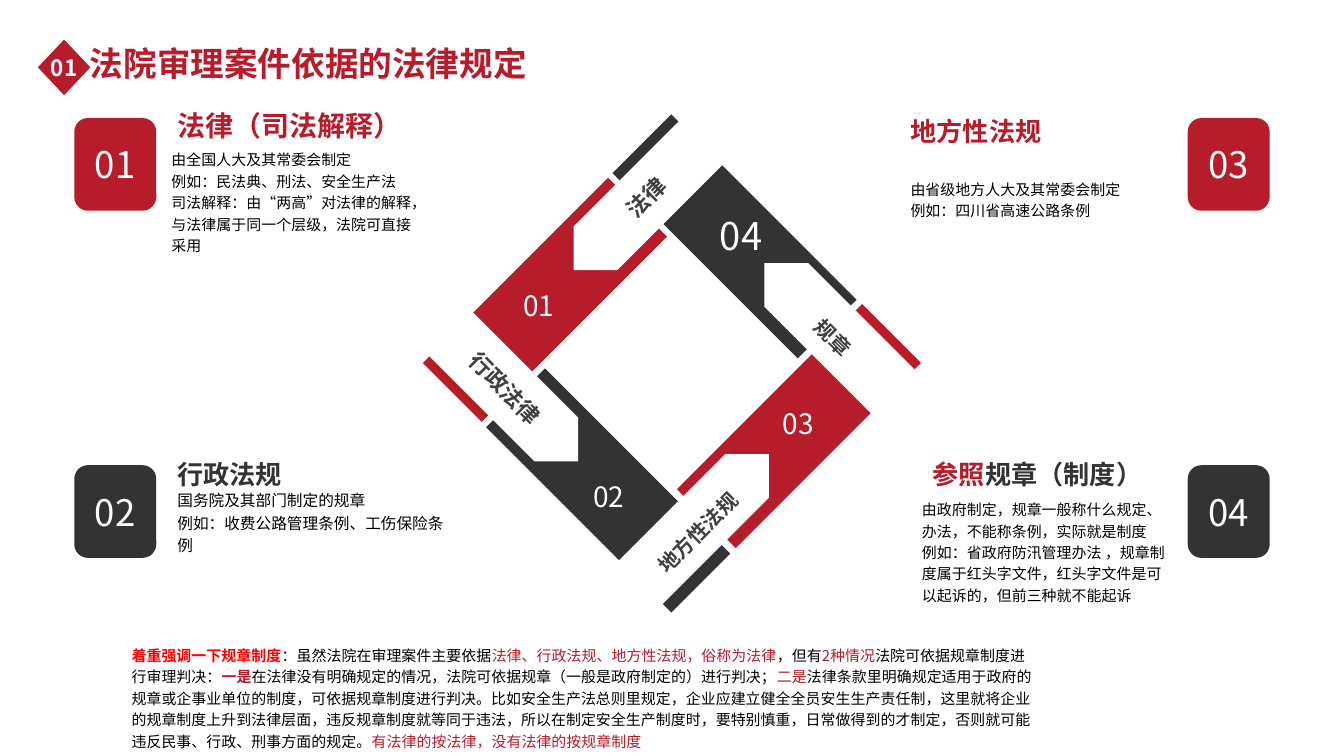
from lxml import etree
from pptx import Presentation
from pptx.dml.color import RGBColor
from pptx.enum.shapes import MSO_SHAPE
from pptx.enum.text import MSO_ANCHOR, PP_ALIGN
from pptx.oxml.ns import qn
from pptx.util import Pt

RED = RGBColor(0xB7, 0x1C, 0x2B)
BRIGHT_RED = RGBColor(0xFF, 0x00, 0x00)
DARK = RGBColor(0x33, 0x33, 0x33)
GREY = RGBColor(0x40, 0x40, 0x40)
BLACK = RGBColor(0x00, 0x00, 0x00)
WHITE = RGBColor(0xFF, 0xFF, 0xFF)
FONT = "Noto Sans CJK SC"

presentation = Presentation()
presentation.slide_width = Pt(720)
presentation.slide_height = Pt(405)
slide = presentation.slides.add_slide(presentation.slide_layouts[6])


def add_block(kind, left, top, width, height, fill, rotation=0):
    shape = slide.shapes.add_shape(kind, Pt(left), Pt(top), Pt(width), Pt(height))
    shape.shadow.inherit = False
    shape.fill.solid()
    shape.fill.fore_color.rgb = fill
    shape.line.fill.background()
    shape.rotation = rotation
    return shape


def add_text(paragraphs, box=None, shape=None, size=8, color=BLACK, bold=False,
             align=PP_ALIGN.LEFT, anchor=MSO_ANCHOR.MIDDLE, insets=(0, 0, 0, 0),
             wrap=False, spacing=None, rotation=0):
    """Write paragraphs into shape, or into a new text box.

    A paragraph is a string or a list of (text, color, bold) runs.
    """
    if shape is None:
        shape = slide.shapes.add_textbox(*[Pt(length) for length in box])
        shape.rotation = rotation
    frame = shape.text_frame
    frame.word_wrap = wrap
    frame.vertical_anchor = anchor
    (frame.margin_left, frame.margin_top,
     frame.margin_right, frame.margin_bottom) = [Pt(inset) for inset in insets]
    for index, content in enumerate(paragraphs):
        paragraph = frame.add_paragraph() if index else frame.paragraphs[0]
        paragraph.alignment = align
        if spacing:
            paragraph.line_spacing = spacing
        runs = [(content, color, bold)] if isinstance(content, str) else content
        for text, run_color, run_bold in runs:
            run = paragraph.add_run()
            run.text = text
            run.font.size = Pt(size)
            run.font.bold = run_bold
            run.font.color.rgb = run_color
            run.font.name = FONT
            properties = run.font._element
            properties.set("lang", "zh-CN")
            etree.SubElement(properties, qn("a:ea")).set("typeface", FONT)


# Pinwheel: white pentagons cut the overlapping bands into arms
BAND_LENGTH, BAND_WIDTH = 140.4, 44.6
PENTAGON_LENGTH, PENTAGON_WIDTH = 102.2, 33.1

bands = [(393.5, 126.7, DARK, 45), (428, 228.2, RED, 135),
         (325.8, 262.8, DARK, 45), (291.9, 160.6, RED, 135)]
for x, y, fill, rotation in bands:
    add_block(MSO_SHAPE.RECTANGLE, x - BAND_LENGTH / 2, y - BAND_WIDTH / 2,
              BAND_LENGTH, BAND_WIDTH, fill, rotation)

# Pentagon centre and rotation, mirrored or not, label and separate label centre
pentagons = [
    (273.6, 211, 45, False, "行政法律", None),
    (343.4, 108.7, 315, True, "法律", None),
    (445.7, 177.1, 225, False, "规章", (447.5, 179.6)),
    (375.8, 279.4, 315, False, "地方性法规", (372.6, 284)),
]
for x, y, rotation, mirrored, label, label_center in pentagons:
    pentagon = add_block(MSO_SHAPE.PENTAGON, x - PENTAGON_LENGTH / 2, y - PENTAGON_WIDTH / 2,
                         PENTAGON_LENGTH, PENTAGON_WIDTH, WHITE, rotation)
    if mirrored:
        pentagon._element.spPr.xfrm.set("flipH", "1")
    if label_center:
        x, y = label_center
        add_text([label], (x - 32.8, y - 8.3, 65.6, 16.6), size=11, color=GREY, bold=True,
                 align=PP_ALIGN.CENTER, anchor=MSO_ANCHOR.TOP, insets=(0, 3.6, 0, 3.6),
                 rotation=rotation % 180 if rotation == 225 else rotation)
    else:
        add_text([label], shape=pentagon, size=12, color=GREY, bold=True,
                 align=PP_ALIGN.CENTER, insets=(7.2, 3.6, 7.2, 3.6))

numbers = [("01", 15, 288.7, 163.4), ("04", 20.4, 397, 126),
           ("03", 15, 427.7, 226.8), ("02", 15, 326.2, 265.7)]
for number, size, x, y in numbers:
    add_text([number], (x - 17.3, y - 17.3, 34.6, 34.6), size=size, color=WHITE,
             align=PP_ALIGN.CENTER)

# Cards: number, left, top, fill, heading box, heading size, heading, body box, body size, body
LEFT_INSETS, RIGHT_INSETS = (11.5, 0, 0, 0), (0, 0, 11.5, 0)
cards = [
    ("01", 39.8, 63.2, RED, (83.5, 60.5, 150, 13.7), 15, "法律（司法解释）",
     (80.4, 77.8, 146.9, 59.8), 8,
     ["由全国人大及其常委会制定", "例如：民法典、刑法、安全生产法",
      "司法解释：由“两高”对法律的解释，与法律属于同一个层级，法院可直接采用"]),
    ("02", 39.8, 249.2, DARK, (83.5, 247, 126, 13.7), 14, "行政法规",
     (83.5, 260.8, 154.8, 36.7), 8.4,
     ["国务院及其部门制定的规章", "例如：收费公路管理条例、工伤保险条例"]),
    ("03", 636.3, 63.2, RED, (487.8, 63.6, 126, 13.7), 14, "地方性法规",
     (487.8, 87.8, 156.2, 36.7), 8,
     ["由省级地方人大及其常委会制定", "例如：四川省高速公路条例"]),
    ("04", 636.3, 249.2, DARK, (499.7, 247, 126, 13.7), 14,
     [("参照", RED, True), ("规章（制度）", DARK, True)],
     (493.9, 272, 146.2, 46.1), 8,
     ["由政府制定，规章一般称什么规定、办法，不能称条例，实际就是制度",
      "例如：省政府防汛管理办法 ，规章制度属于红头字文件，红头字文件是可以起诉的，但前三种就不能起诉"]),
]
for (number, left, top, fill, heading_box, heading_size, heading,
     body_box, body_size, body) in cards:
    insets = LEFT_INSETS if left < 360 else RIGHT_INSETS
    badge = add_block(MSO_SHAPE.ROUNDED_RECTANGLE, left, top, 43.9, 49.7, fill)
    add_text([number], shape=badge, size=19.6, color=WHITE, align=PP_ALIGN.CENTER,
             insets=(7.2, 3.6, 7.2, 3.6), wrap=True)
    add_text([heading], heading_box, size=heading_size, color=fill, bold=True, insets=insets)
    add_text(body, body_box, size=body_size, insets=insets, wrap=True, spacing=1.2)

# Title
add_text(["法院审理案件依据的法律规定"], (48.2, 18.5, 267.8, 30.2), size=18, color=RED,
         bold=True, insets=(0, 3.6, 0, 3.6), wrap=True)
diamond = add_block(MSO_SHAPE.DIAMOND, 20.3, 21.2, 28.1, 29.8, RED)
add_text(["01"], shape=diamond, size=12, color=WHITE, bold=True, align=PP_ALIGN.CENTER)

# Closing remark
remark = [
    ("着重强调一下规章制度", BRIGHT_RED, True),
    ("：虽然法院在审理案件主要依据", BLACK, False),
    ("法律、行政法规、地方性法规，俗称为法律", RED, False),
    ("，但有", BLACK, False),
    ("2种情况", RED, False),
    ("法院可依据规章制度进行审理判决：", BLACK, False),
    ("一是", RED, True),
    ("在法律没有明确规定的情况，法院可依据规章（一般是政府制定的）进行判决；", BLACK, False),
    ("二是", RED, False),
    ("法律条款里明确规定适用于政府的规章或企事业单位的制度，可依据规章制度进行判决。"
     "比如安全生产法总则里规定，企业应建立健全全员安生生产责任制，"
     "这里就将企业的规章制度上升到法律层面，违反规章制度就等同于违法，"
     "所以在制定安全生产制度时，要特别慎重，日常做得到的才制定，"
     "否则就可能违反民事、行政、刑事方面的规定。", BLACK, False),
    ("有法律的按法律，没有法律的按规章制度", RED, False),
]
add_text([remark], (59, 342.9, 497.5, 60.5), insets=LEFT_INSETS, wrap=True, spacing=1.2)

presentation.save("out.pptx")
